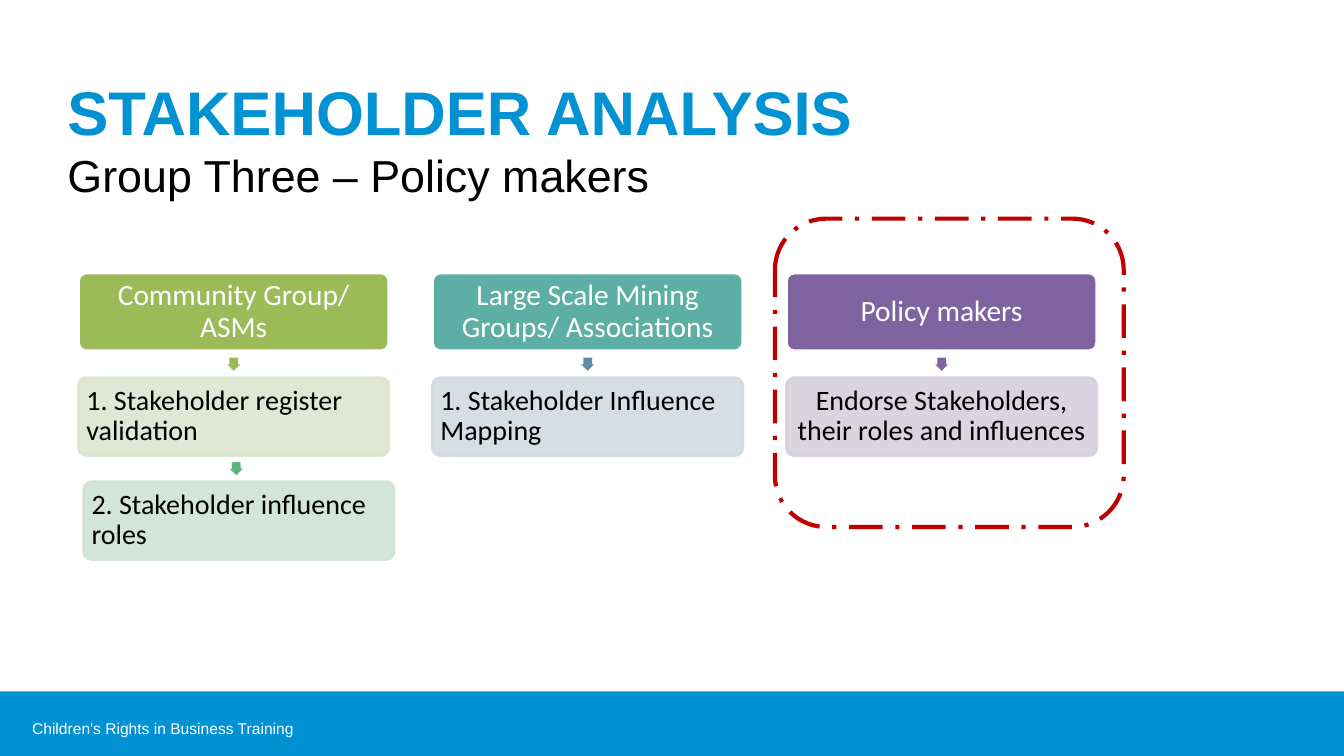
import math

from lxml import etree
from pptx import Presentation
from pptx.dml.color import RGBColor
from pptx.enum import dml, shapes, text
from pptx.oxml.ns import qn
from pptx.util import Cm, Pt

TITLE = [
    ("STAKEHOLDER ANALYSIS", dict(size=Pt(44), bold=True), "0092D2"),
    ("Group Three – Policy makers", dict(size=Pt(32), bold=False), "000000"),
]
FOOTER = "Children's Rights in Business Training"
CENTER, LEFT = text.PP_ALIGN.CENTER, text.PP_ALIGN.LEFT

# Each column: heading, its fill, then steps as (wording, fill, arrow fill, alignment)
COLUMNS = [
    ("Community Group/ ASMs", "9BBB59", [
        ("1. Stakeholder register validation", "DDE5D0", "9BBB59", LEFT),
        ("2. Stakeholder influence roles", "CFE3D7", "5BB27B", LEFT),
    ]),
    ("Large Scale Mining Groups/ Associations", "5DAEA5", [
        ("1. Stakeholder Influence Mapping", "D0DBE0", "5F8AA9", LEFT),
    ]),
    ("Policy makers", "7F63A1", [
        ("Endorse Stakeholders, their roles and influences", "D6D0DE", "7F63A1", CENTER),
    ]),
]
COLUMN_LEFT, COLUMN_PITCH = 1.98, 8.92
ROW_TOPS = [6.88, 9.52, 12.14]
ROW_SHIFTS = [0, 0, 0.13]
BOX_WIDTH, BOX_HEIGHT, ARROW_SIZE = 7.82, 1.96, 0.33

deck = Presentation()
deck.slide_width, deck.slide_height = Cm(33.87), Cm(19.05)
slide = deck.slides.add_slide(deck.slide_layouts[5])


def rgb(code):
    return RGBColor.from_string(code)


def format_font(font, color, **values):
    for name, value in values.items():
        setattr(font, name, value)
    font.color.rgb = rgb(color)


def set_frame(frame, inset_x, inset_y, anchor):
    values = dict(margin_left=Cm(inset_x), margin_right=Cm(inset_x),
                  margin_top=Cm(inset_y), margin_bottom=Cm(inset_y),
                  word_wrap=True, auto_size=text.MSO_AUTO_SIZE.NONE,
                  vertical_anchor=anchor)
    for name, value in values.items():
        setattr(frame, name, value)


def add_shape(kind, left, top, width, height, fill=None, line=None, line_width=2):
    shape = slide.shapes.add_shape(kind, Cm(left), Cm(top), Cm(width), Cm(height))
    shape.shadow.inherit = False
    if fill:
        shape.fill.solid()
        shape.fill.fore_color.rgb = rgb(fill)
    else:
        shape.fill.background()
    if line:
        shape.line.color.rgb = rgb(line)
        shape.line.width = Pt(line_width)
    else:
        shape.line.fill.background()
    return shape


def make_translucent(shape, percent):
    """Give the fill and the outline the same opacity."""
    for color in shape.element.spPr.iter(qn("a:srgbClr")):
        etree.SubElement(color, qn("a:alpha"), val=str(percent * 1000))


def add_box(left, top, wording, fill, line, size, color, align):
    box = add_shape(shapes.MSO_SHAPE.ROUNDED_RECTANGLE, left, top,
                    BOX_WIDTH, BOX_HEIGHT, fill, line)
    box.adjustments[0] = 0.1
    set_frame(box.text_frame, 0.14, 0.14, text.MSO_ANCHOR.MIDDLE)
    para = box.text_frame.paragraphs[0]
    para.alignment, para.line_spacing = align, 0.9
    span = para.add_run()
    span.text = wording
    format_font(span.font, color, name="Calibri", size=Pt(size))
    return box


def add_arrow(upper, lower, fill):
    """Point a small arrow from one box (left, top) to the next, midway between."""
    dx, dy = lower[0] - upper[0], lower[1] - upper[1]
    center_x = upper[0] + (dx + BOX_WIDTH) / 2
    center_y = upper[1] + (dy + BOX_HEIGHT) / 2
    arrow = add_shape(shapes.MSO_SHAPE.RIGHT_ARROW, center_x - ARROW_SIZE / 2,
                      center_y - ARROW_SIZE / 2, ARROW_SIZE, ARROW_SIZE, fill)
    arrow.adjustments[0], arrow.adjustments[1] = 0.667, 0.5
    arrow.rotation = round(math.degrees(math.atan2(dy, dx)))


# Footer bar
add_shape(shapes.MSO_SHAPE.RECTANGLE, 0, 17.42, 33.87, 1.7, "0092D2")
footer = slide.shapes.add_textbox(Cm(0.56), Cm(17.98), Cm(19.76), Cm(0.64))
set_frame(footer.text_frame, 0.25, 0.13, text.MSO_ANCHOR.TOP)
span = footer.text_frame.paragraphs[0].add_run()
span.text = FOOTER
format_font(span.font, "FFFFFF", name="Arial", size=Pt(11.1))

# Title
title = slide.shapes.title
title.left, title.top, title.width, title.height = Cm(1.7), Cm(1.27), Cm(30.2), Cm(3.81)
set_frame(title.text_frame, 0, 0, text.MSO_ANCHOR.BOTTOM)
para = title.text_frame.paragraphs[0]
para.alignment = LEFT
for index, (wording, values, color) in enumerate(TITLE):
    if index:
        para.add_line_break()
    span = para.add_run()
    span.text = wording
    format_font(span.font, color, name="Arial", **values)

# Stakeholder columns
for index, (heading, heading_fill, steps) in enumerate(COLUMNS):
    column_left = COLUMN_LEFT + index * COLUMN_PITCH
    spots = [(column_left + shift, top) for shift, top in zip(ROW_SHIFTS, ROW_TOPS)]
    add_box(*spots[0], heading, heading_fill, "FFFFFF", 21, "FFFFFF", CENTER)
    for upper, lower, (wording, fill, arrow_fill, align) in zip(spots, spots[1:], steps):
        add_arrow(upper, lower, arrow_fill)
        step = add_box(*lower, wording, fill, fill, 20, "000000", align)
        make_translucent(step, 90)

# Highlight around the policy makers
highlight = add_shape(shapes.MSO_SHAPE.ROUNDED_RECTANGLE, 19.53, 5.51, 8.79, 7.77,
                      line="C00000", line_width=3)
highlight.line.dash_style = dml.MSO_LINE.LONG_DASH_DOT

deck.save("out.pptx")
